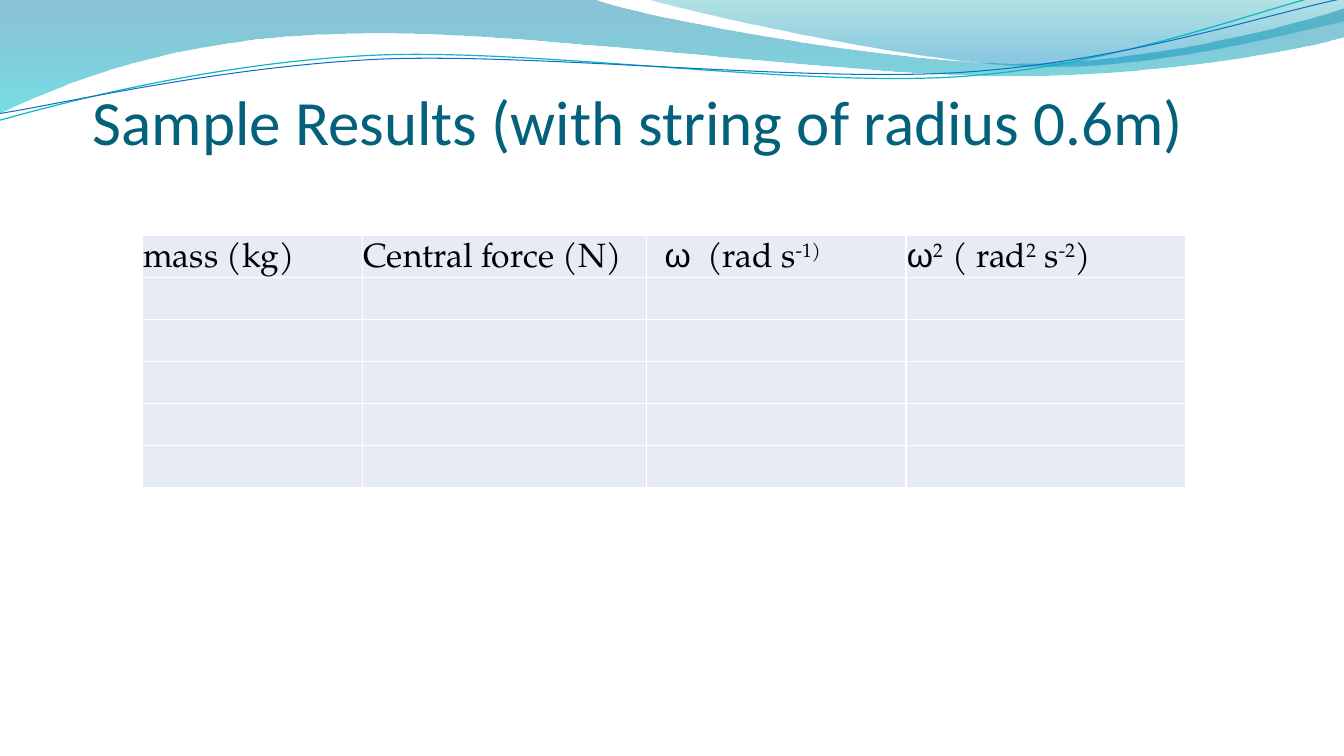
import math
import pptx
import pptx.util
import pptx.dml.color
import pptx.enum.text
from dataclasses import dataclass
from pptx.oxml.ns import qn

Pt = pptx.util.Pt
Anchor = pptx.enum.text.MSO_ANCHOR


@dataclass(frozen=True)
class Theme:
    title: str = "04617B"
    ink: str = "000000"
    cell: str = "E7EBF5"
    rule: str = "FFFFFF"
    teal: str = "0AB8BF"
    blue: str = "0F6FC6"
    # Gradient stops: position, colour, opacity in percent
    back: tuple = ((0, "0074A1", 45), (1, "00C6CF", 55))
    front: tuple = ((0, "00A1A9", 30), (0.8, "008BBF", 45))
    sans: str = "Calibri"
    serif: str = "TeX Gyre Pagella"
    greek: str = "Arial"
    big: int = 45
    body: int = 24


T = Theme()
TILT = -2.7

# Each wave is a start point, then line ends (2 numbers) or cubic curves (6).
BACK = [(-0.7, -0.4), (422.6, -0.7),
        (456.5, 12.2, 637.2, 45.4, 727.9, 45.4),
        (819.4, 45.4, 920.2, 18.7, 959.8, 6.5), (961.2, 25.9),
        (943.9, 31.7, 835.2, 54.7, 715.7, 54),
        (596.9, 54, 366.5, 20.2, 247, 24.5),
        (123.8, 25.9, 43.9, 59.8, -0.7, 81.4)]
FRONT = [(460.1, -0.7), (488.9, 7.9, 654.5, 44.6, 738, 46.8),
         (821.5, 49.7, 923, 23, 959.8, 15.1), (959.8, 0)]
UPPER = [(-0.7, 85.7), (46.1, 72.7, 151.9, 44.6, 265.7, 39.6),
         (379.4, 34.6, 568.8, 62.6, 684, 54.7),
         (799.2, 47.5, 901.4, 5.8, 958.3, -7.2)]
LOWER = [(0, 80.6), (45.4, 74.2, 157, 47.5, 272.2, 42.5),
         (386.6, 38.2, 573.1, 59, 687.6, 51.8),
         (802.8, 44.6, 903.6, 10.1, 960.5, -1.4)]

# Header cells: runs of text, marked "sup" or "greek" where they differ.
HEADS = [
    [("mass (kg)", "")],
    [("Central force (N)", "")],
    [("ω", "greek"), ("  (rad s", ""), ("-1)", "sup")],
    [("ω", "greek"), ("2  ", "sup"), ("( rad", ""), ("2", "sup"),
     (" s", ""), ("-2", "sup"), (")", "")],
]
COLS = [157, 203.3, 185.2, 199.4]
ROWS = 6


def rgb(code):
    return pptx.dml.color.RGBColor.from_string(code)


def write(para, text, font=T.serif, size=T.body, color=T.ink, sup=False):
    run = para.add_run()
    run.text = text
    run.font.name = font
    run.font.size = Pt(size)
    run.font.color.rgb = rgb(color)
    if sup:
        run.font._element.set("baseline", "30000")


def turn(x, y, angle):
    """Rotate a point about the origin, clockwise on the slide."""
    c, s = math.cos(math.radians(angle)), math.sin(math.radians(angle))
    return x * c - y * s, x * s + y * c


def bend(shape, curve):
    """Merge each three line segments of a curve into one cubic."""
    route = shape._element.find(".//" + qn("a:path"))
    lines = iter(route.findall(qn("a:lnTo")))
    for seg in curve:
        if len(seg) == 2:
            next(lines)
            continue
        cubic = route.makeelement(qn("a:cubicBezTo"), {})
        trio = [next(lines) for _ in range(3)]
        trio[0].addprevious(cubic)
        for line in trio:
            cubic.append(line[0])
            route.remove(line)


def wave(shapes, box, curve, close, tilt=0):
    pts = [turn(*seg[i:i + 2], -tilt)
           for seg in curve for i in range(0, len(seg), 2)]
    form = shapes.build_freeform(*pts[0], scale=float(Pt(1)))
    form.add_line_segments(pts[1:], close=close)
    shape = form.convert_to_shape(Pt(box[0]), Pt(box[1]))
    bend(shape, curve[1:])
    shape.shadow.inherit = False
    if tilt:
        half = shape.width / 2, shape.height / 2
        mid = turn(shape.left - Pt(box[0]) + half[0],
                   shape.top - Pt(box[1]) + half[1], tilt)
        shape.left = round(Pt(box[0]) + mid[0] - half[0])
        shape.top = round(Pt(box[1]) + mid[1] - half[1])
        shape.rotation = tilt
    return shape


def header(slide, box):
    for curve, stops in ((BACK, T.back), (FRONT, T.front)):
        shape = wave(slide.shapes, box, curve, True)
        shape.line.fill.background()
        shape.fill.gradient()
        shape.fill.gradient_angle = 270
        for stop, (pos, color, alpha) in zip(shape.fill.gradient_stops, stops):
            stop.position = pos
            stop.color.rgb = rgb(color)
            node = stop._gs.find(qn("a:srgbClr"))
            node.append(node.makeelement(qn("a:alpha"),
                                         {"val": str(alpha * 1000)}))
    group = slide.shapes.add_group_shape()
    for curve, color, width in ((UPPER, T.teal, 0.85), (LOWER, T.blue, 0.75)):
        shape = wave(group.shapes, box, curve, False, TILT)
        shape.fill.background()
        shape.line.color.rgb = rgb(color)
        shape.line.width = Pt(width)


def title(slide, box, text):
    frame = slide.shapes.add_textbox(*map(Pt, box)).text_frame
    frame.word_wrap = True
    frame.vertical_anchor = Anchor.BOTTOM
    frame.margin_left = frame.margin_right = frame.margin_bottom = 0
    frame.margin_top = Pt(3.6)
    write(frame.paragraphs[0], text, font=T.sans, size=T.big, color=T.title)


def edge(cell):
    """Draw a thin rule on all four sides of a cell."""
    props = cell._tc.get_or_add_tcPr()
    for i, side in enumerate(("lnL", "lnR", "lnT", "lnB")):
        line = props.makeelement(qn("a:" + side), {"w": str(Pt(1))})
        fill = line.makeelement(qn("a:solidFill"), {})
        fill.append(fill.makeelement(qn("a:srgbClr"), {"val": T.rule}))
        line.append(fill)
        props.insert(i, line)


def results(slide, box):
    table = slide.shapes.add_table(ROWS, len(COLS), *map(Pt, box)).table
    table.first_row = table.horz_banding = False
    for col, width in zip(table.columns, COLS):
        col.width = Pt(width)
    for row in table.rows:
        row.height = Pt(box[3] / ROWS)
    for cell in table.iter_cells():
        cell.fill.solid()
        cell.fill.fore_color.rgb = rgb(T.cell)
        edge(cell)
    for i, runs in enumerate(HEADS):
        cell = table.cell(0, i)
        cell.vertical_anchor = Anchor.BOTTOM
        cell.margin_left = Pt(12.7 if i == 2 else 0.7)
        cell.margin_right = cell.margin_top = Pt(0.7)
        cell.margin_bottom = 0
        for text, kind in runs:
            write(cell.text_frame.paragraphs[0], text, sup=kind == "sup",
                  font=T.greek if kind == "greek" else T.serif)


def main():
    deck = pptx.Presentation()
    deck.slide_width, deck.slide_height = Pt(960), Pt(540)
    slide = deck.slides.add_slide(deck.slide_layouts[6])
    header(slide, (0, 0, 960, 86))
    title(slide, (66.2, 28.8, 828, 84.2),
          "Sample Results (with string of radius 0.6m)")
    results(slide, (101.7, 168, sum(COLS), 180))
    deck.save("out.pptx")


if __name__ == "__main__":
    main()
